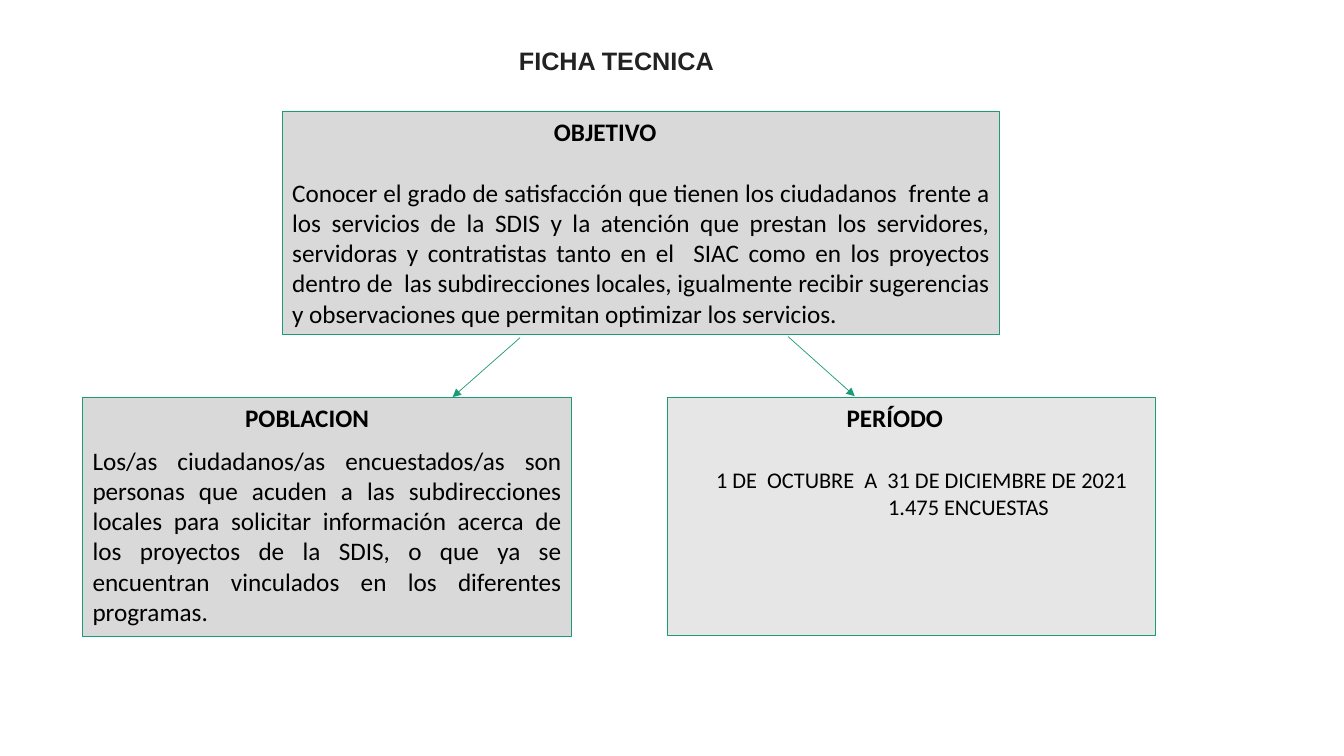
from lxml.etree import SubElement
from pptx import Presentation
from pptx.dml.color import RGBColor
from pptx.enum.shapes import MSO_CONNECTOR, MSO_SHAPE
from pptx.enum.text import MSO_ANCHOR, PP_ALIGN
from pptx.oxml.ns import qn
from pptx.util import Pt

WHITE = RGBColor(0xFF, 0xFF, 0xFF)
BLACK = RGBColor(0x00, 0x00, 0x00)
CHARCOAL = RGBColor(0x22, 0x22, 0x22)
GREEN = RGBColor(0x1D, 0x9A, 0x78)
GRAY = RGBColor(0xD9, 0xD9, 0xD9)
LIGHT_GRAY = RGBColor(0xE7, 0xE6, 0xE6)

OBJECTIVE = (
    "Conocer el grado de satisfacción que tienen los ciudadanos  frente a los servicios "
    "de la SDIS y la atención que prestan los servidores, servidoras y contratistas tanto "
    "en el  SIAC como en los proyectos dentro de  las subdirecciones locales, igualmente "
    "recibir sugerencias y observaciones que permitan optimizar los servicios."
)
POPULATION = (
    "Los/as ciudadanos/as encuestados/as son personas que acuden a las subdirecciones "
    "locales para solicitar información acerca de los proyectos de la SDIS, o que ya se "
    "encuentran vinculados en los diferentes programas."
)


class FactSheet:
    """Draw the fact sheet elements on one slide in a shared style."""

    def __init__(self, presentation):
        self.slide = presentation.slides.add_slide(presentation.slide_layouts[6])
        self.slide.background.fill.solid()
        self.slide.background.fill.fore_color.rgb = WHITE
        self.line_width = Pt(0.5)

    def set_paragraph(self, paragraph, text, size=18, bold=False, font="Calibri", color=BLACK,
                      alignment=PP_ALIGN.LEFT, indent=0, before=0):
        paragraph.text = text
        paragraph.alignment = alignment
        paragraph.space_before = Pt(before)
        properties = paragraph._p.get_or_add_pPr()
        properties.set("marL", str(Pt(indent)))
        properties.set("indent", "0")
        for run in paragraph.runs:
            run.font.name = font
            run.font.size = Pt(size)
            run.font.bold = bold
            run.font.color.rgb = color

    def title(self, text, left, top, width, height):
        shape = self.slide.shapes.add_textbox(Pt(left), Pt(top), Pt(width), Pt(height))
        shape.text_frame.word_wrap = True
        self.set_paragraph(shape.text_frame.paragraphs[0], text, bold=True, font="Arial",
                           color=CHARCOAL)

    def box(self, left, top, width, height, fill, heading, heading_indent, body):
        shape = self.slide.shapes.add_shape(
            MSO_SHAPE.RECTANGLE, Pt(left), Pt(top), Pt(width), Pt(height))
        shape.shadow.inherit = False
        shape.fill.solid()
        shape.fill.fore_color.rgb = fill
        shape.line.color.rgb = GREEN
        shape.line.width = self.line_width
        text_frame = shape.text_frame
        text_frame.word_wrap = True
        text_frame.vertical_anchor = MSO_ANCHOR.TOP
        self.set_paragraph(text_frame.paragraphs[0], heading, bold=True, indent=heading_indent)
        for text, style in body:
            self.set_paragraph(text_frame.add_paragraph(), text, **style)

    def arrow(self, start, end):
        connector = self.slide.shapes.add_connector(
            MSO_CONNECTOR.STRAIGHT, *(Pt(value) for value in start + end))
        connector.line.color.rgb = GREEN
        connector.line.width = self.line_width
        SubElement(connector.line._get_or_add_ln(), qn("a:tailEnd"), type="triangle")
        SubElement(connector._element.spPr, qn("a:effectLst"))


def main():
    presentation = Presentation()
    presentation.slide_width = Pt(960)
    presentation.slide_height = Pt(540)
    sheet = FactSheet(presentation)
    justified = {"alignment": PP_ALIGN.JUSTIFY}
    centered = {"alignment": PP_ALIGN.CENTER, "size": 16}

    sheet.title("FICHA TECNICA", 363.6, 28.8, 314.6, 28.8)
    sheet.box(201.6, 79.2, 512.6, 159.8, GRAY, "OBJETIVO", 187,
              [(OBJECTIVE, {**justified, "before": 22})])
    sheet.box(59, 283.7, 349.2, 170.6, GRAY, "POBLACION", 109,
              [(POPULATION, {**justified, "before": 9})])
    sheet.box(476.6, 283.7, 348.5, 170, LIGHT_GRAY, "PERÍODO", 121, [
        ("1 DE  OCTUBRE  A  31 DE DICIEMBRE DE 2021", {**centered, "indent": 15, "before": 24}),
        ("1.475 ENCUESTAS", {**centered, "indent": 82}),
    ])
    sheet.arrow((371.5, 241.2), (323.3, 283.7))
    sheet.arrow((563, 240.5), (610.6, 283))
    presentation.save("out.pptx")


if __name__ == "__main__":
    main()
